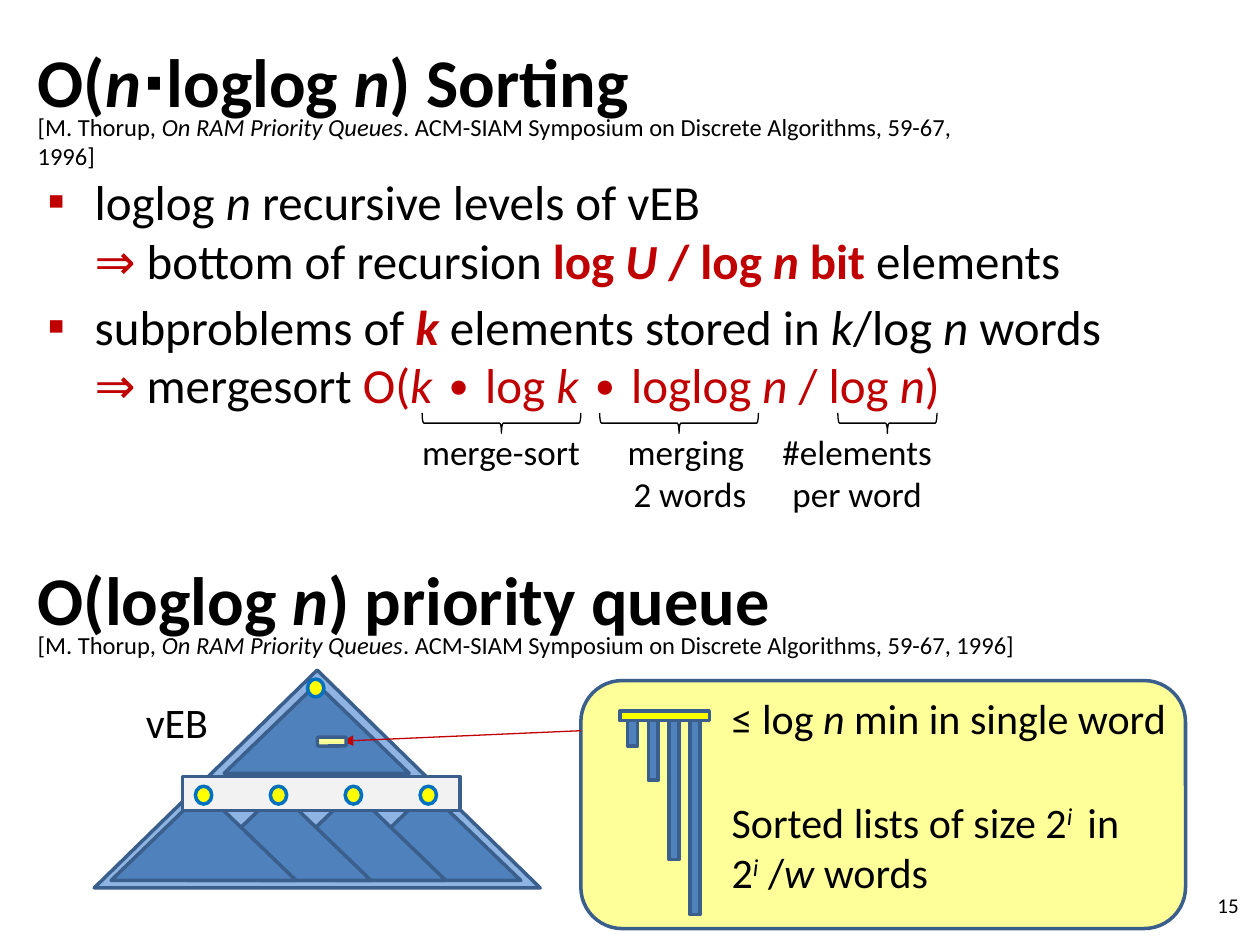
from dataclasses import dataclass

from lxml.etree import SubElement
from pptx import Presentation
from pptx.dml.color import RGBColor
from pptx.enum.shapes import MSO_CONNECTOR as Connector, MSO_SHAPE as Shape
from pptx.enum.text import MSO_ANCHOR as Anchor, PP_ALIGN as Align
from pptx.oxml.ns import qn
from pptx.util import Cm, Pt

COLORS = {
    "text": "000000", "accent": "C00000", "outline": "3A5F8C",
    "blue": "4F81BD", "pale blue": "8EB4E3", "band": "F2F2F2",
    "yellow": "FFFF00", "pale yellow": "FFFF99", "dot outline": "0070C0",
}
FONT = "Calibri"


@dataclass(frozen=True)
class Box:
    left: float
    top: float
    width: float
    height: float

    def lengths(self) -> tuple:
        return Cm(self.left), Cm(self.top), Cm(self.width), Cm(self.height)


@dataclass(frozen=True)
class Span:
    text: str
    italic: bool = False
    bold: bool = False
    color: str = "text"
    raised: bool = False


@dataclass(frozen=True)
class Brace:
    center: float
    width: float
    label: tuple[str, ...]
    label_center: float


def italic(text: str) -> Span:
    return Span(text, italic=True)


def red(text: str, **style) -> Span:
    return Span(text, color="accent", **style)


def rgb(name: str) -> RGBColor:
    return RGBColor.from_string(COLORS[name])


def fill_para(para, lines: list[list[Span]], size: float) -> None:
    """Write the lines into one paragraph, with line breaks between them."""
    for index, line in enumerate(lines):
        if index:
            para.add_line_break()
        for span in line:
            run = para.add_run()
            run.text = span.text
            font = run.font
            font.name, font.size = FONT, Pt(size)
            font.bold, font.italic = span.bold, span.italic
            font.color.rgb = rgb(span.color)
            if span.raised:
                run._r.get_or_add_rPr().set("baseline", "30000")


def add_bullet(para) -> None:
    props = para._p.get_or_add_pPr()
    props.set("marL", str(Cm(0.95)))
    props.set("indent", str(-Cm(0.95)))
    color = SubElement(props, qn("a:buClr"))
    SubElement(color, qn("a:srgbClr")).set("val", COLORS["accent"])
    SubElement(props, qn("a:buFont")).set("typeface", FONT)
    SubElement(props, qn("a:buChar")).set("char", "▪")


def add_text(slide, box: Box, paras: list, size: float, align=Align.LEFT,
             anchor=Anchor.TOP, bullets: bool = False) -> None:
    frame = slide.shapes.add_textbox(*box.lengths()).text_frame
    frame.word_wrap = True
    frame.vertical_anchor = anchor
    for index, lines in enumerate(paras):
        para = frame.add_paragraph() if index else frame.paragraphs[0]
        para.alignment = align
        if bullets:
            para.space_before = Pt(4)
            add_bullet(para)
        fill_para(para, lines, size)


def add_figure(shapes, kind, box: Box, fill: str | None,
               line: str = "outline", weight: float = 2):
    figure = shapes.add_shape(kind, *box.lengths())
    figure.shadow.inherit = False
    if fill:
        figure.fill.solid()
        figure.fill.fore_color.rgb = rgb(fill)
    else:
        figure.fill.background()
    figure.line.color.rgb = rgb(line)
    figure.line.width = Pt(weight)
    return figure


def add_heading(slide, top: float, title: list[Span], cite_width: float) -> None:
    """Add a section title with its citation underneath."""
    add_text(slide, Box(0.51, top, 22.86, 2.16), [[title]], 39, anchor=Anchor.MIDDLE)
    citation = [
        Span("[M. Thorup, "), italic("On RAM Priority Queues"),
        Span(". ACM-SIAM Symposium on Discrete Algorithms, 59-67, 1996]"),
    ]
    add_text(slide, Box(0.51, top + 1.6, cite_width, 1), [[citation]], 14)


def add_brace(slide, brace: Brace) -> None:
    depth, middle, label_width = 0.41, 8.53, 3.99
    box = Box(brace.center - depth / 2, middle - brace.width / 2, depth, brace.width)
    add_figure(slide.shapes, Shape.LEFT_BRACE, box, None, "text", 0.75).rotation = 270
    lines = [[Span(line)] for line in brace.label]
    label = Box(brace.label_center - label_width / 2, 8.55, label_width, 1.96)
    add_text(slide, label, [lines], 20, Align.CENTER)


def add_tree(slide) -> None:
    """Draw the vEB tree: a top structure over a row of bottom structures."""
    shapes = slide.shapes.add_group_shape().shapes
    step = 1.51
    add_figure(shapes, Shape.ISOSCELES_TRIANGLE, Box(1.9, 13.51, 8.99, 4.39), "pale blue")
    corners = [(4.52, 13.79)] + [(2.24 + step * i, 15.95) for i in reversed(range(4))]
    for left, top in corners:
        add_figure(shapes, Shape.ISOSCELES_TRIANGLE, Box(left, top, 3.73, 1.8), "blue")
    add_figure(shapes, Shape.RECTANGLE, Box(3.68, 15.65, 5.59, 0.69), "band")
    dots = [(3.94 + step * i, 15.85) for i in range(4)] + [(6.2, 13.69)]
    for left, top in dots:
        add_figure(shapes, Shape.OVAL, Box(left, top, 0.33, 0.36), "yellow", "dot outline")


def add_arrow(slide, start: tuple[float, float], end: tuple[float, float]) -> None:
    arrow = slide.shapes.add_connector(
        Connector.STRAIGHT, *(Cm(value) for value in start + end))
    arrow.line.color.rgb = rgb("accent")
    arrow.line.width = Pt(0.75)
    SubElement(arrow.line._get_or_add_ln(), qn("a:tailEnd")).set("type", "triangle")
    SubElement(arrow._element.spPr, qn("a:effectLst"))


def add_sorting(slide) -> None:
    title = [Span("O(", bold=True), Span("n", True, True), Span("∙loglog ", bold=True),
             Span("n", True, True), Span(") Sorting", bold=True)]
    add_heading(slide, 0.53, title, 20.19)
    levels = [
        [Span("loglog "), italic("n "), Span("recursive levels of vEB ")],
        [red("⇒ "), Span("bottom of recursion "), red("log ", bold=True),
         red("U ", bold=True, italic=True), red("/ log ", bold=True),
         red("n", bold=True, italic=True), red(" bit ", bold=True), Span("elements")],
    ]
    subproblems = [
        [Span("subproblems of "), red("k", bold=True, italic=True),
         Span(" elements stored in "), italic("k"), Span("/log "), italic("n "),
         Span("words")],
        [red("⇒ "), Span("mergesort "), red("O("), red("k", italic=True),
         red(" ∙ log "), red("k", italic=True), red(" ∙ loglog "),
         red("n", italic=True), red(" / log "), red("n", italic=True), red(")")],
    ]
    add_text(slide, Box(0.71, 3.33, 24.69, 5.79), [levels, subproblems], 28, bullets=True)
    for brace in (
        Brace(10.11, 3.2, ("merge-sort",), 10.1),
        Brace(13.69, 3.2, ("merging ", "2 words"), 13.91),
        Brace(17.89, 2, ("#elements", "per word"), 17.28),
    ):
        add_brace(slide, brace)


def add_priority_queue(slide) -> None:
    shapes = slide.shapes
    title = [Span("O(loglog ", bold=True), Span("n", True, True),
             Span(") priority queue", bold=True)]
    add_heading(slide, 10.97, title, 20.4)
    add_figure(shapes, Shape.ROUNDED_RECTANGLE, Box(11.71, 13.72, 12.19, 5), "pale yellow")
    add_tree(slide)
    for index, height in enumerate((0.71, 1.4, 3, 4.11)):
        bar = Box(12.65 + 0.42 * index, 14.33, 0.2, height)
        add_figure(shapes, Shape.RECTANGLE, bar, "blue")
    add_arrow(slide, (11.71, 14.73), (6.91, 14.94))
    add_figure(shapes, Shape.RECTANGLE, Box(12.5, 14.33, 1.8, 0.2), "yellow")
    add_figure(shapes, Shape.ROUNDED_RECTANGLE, Box(6.4, 14.86, 0.58, 0.18), "pale yellow")
    minimum = [Span("≤ log "), italic("n"), Span(" min in single word")]
    sorted_lists = [
        Span("Sorted lists of size 2"), Span("i ", italic=True, raised=True),
        Span(" in 2"), Span("i", italic=True, raised=True),
        Span(" /"), italic("w "), Span("words"),
    ]
    add_text(slide, Box(14.5, 13.84, 9.4, 1.27), [[minimum]], 24)
    add_text(slide, Box(14.5, 15.93, 8.99, 2.31), [[sorted_lists]], 24)
    add_text(slide, Box(2.69, 13.92, 2.01, 1.27), [[[Span("vEB")]]], 24)


def main() -> None:
    deck = Presentation()
    deck.slide_width, deck.slide_height = Cm(25.4), Cm(19.05)
    slide = deck.slides.add_slide(deck.slide_layouts[6])
    add_sorting(slide)
    add_priority_queue(slide)
    add_text(slide, Box(19.3, 17.73, 5.92, 1.02), [[[Span("15")]]], 12,
             Align.RIGHT, Anchor.MIDDLE)
    deck.save("out.pptx")


if __name__ == "__main__":
    main()
